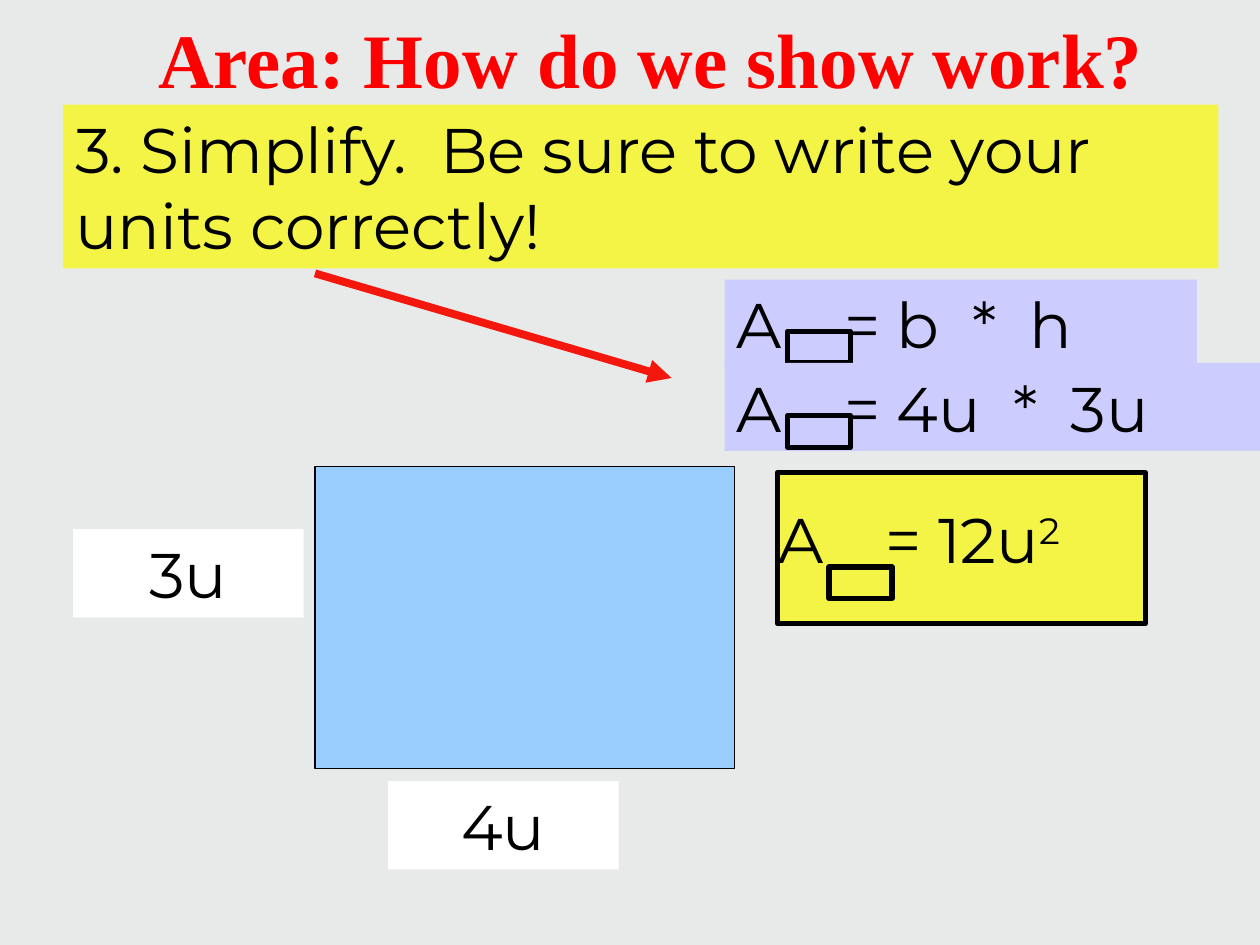
"""Build a slide that shows the last step of finding a rectangle's area."""
from lxml import etree
from pptx import Presentation
from pptx.dml.color import RGBColor
from pptx.enum.shapes import MSO_CONNECTOR, MSO_SHAPE
from pptx.enum.text import MSO_ANCHOR, PP_ALIGN
from pptx.oxml.ns import qn
from pptx.util import Inches, Pt

RECT = MSO_SHAPE.RECTANGLE
STRAIGHT = MSO_CONNECTOR.STRAIGHT
TOP, MIDDLE = MSO_ANCHOR.TOP, MSO_ANCHOR.MIDDLE
LEFT, CENTER = PP_ALIGN.LEFT, PP_ALIGN.CENTER
COLORS = {name: RGBColor.from_string(value) for name, value in {
    "background": "E8EAE9", "yellow": "F4F446", "blue": "99CCFF",
    "lavender": "CCCCFF", "white": "FFFFFF", "black": "000000",
    "title": "FF0000", "arrow": "F4170E",
}.items()}

prs = Presentation()
prs.slide_width, prs.slide_height = Inches(10), Inches(7.5)
s = prs.slides.add_slide(prs.slide_layouts[5])
s.background.fill.solid()
s.background.fill.fore_color.rgb = COLORS["background"]


def add_box(text, x, y, w, h, fill=None, line=None, align=LEFT, tab=None, power=None):
    sp = s.shapes.add_shape(RECT, Inches(x), Inches(y), Inches(w), Inches(h))
    sp.shadow.inherit = False
    if fill:
        sp.fill.solid()
        sp.fill.fore_color.rgb = COLORS[fill]
    else:
        sp.fill.background()
    if line:
        sp.line.color.rgb = COLORS["black"]
        sp.line.width = Pt(line)
    else:
        sp.line.fill.background()
    if not text:
        return
    tf = sp.text_frame
    tf.word_wrap = True
    tf.vertical_anchor = TOP
    p = tf.paragraphs[0]
    p.alignment = align
    if tab:
        tabs = etree.SubElement(p._p.get_or_add_pPr(), qn("a:tabLst"))
        etree.SubElement(tabs, qn("a:tab"), pos=str(Inches(tab)), algn="l")
    for part in filter(None, (text, power)):
        r = p.add_run()
        r.text = part
        r.font.name = "Montserrat"
        r.font.size = Pt(36)
        r.font.color.rgb = COLORS["black"]
    if power:
        r._r.get_or_add_rPr().set("baseline", "30000")


title = s.shapes.title
title.left, title.top = Inches(0.33), Inches(-0.17)
title.width, title.height = Inches(9.67), Inches(1.25)
tf = title.text_frame
tf.vertical_anchor = MIDDLE
p = tf.paragraphs[0]
p.alignment = CENTER
r = p.add_run()
r.text = "Area: How do we show work?"
r.font.name = "Times New Roman"
r.font.size = Pt(44)
r.font.bold = True
r.font.color.rgb = COLORS["title"]

add_box("", 6.17, 3.75, 2.92, 1.2, fill="yellow", line=3)
add_box("", 2.5, 3.7, 3.33, 2.4, fill="blue", line=0.75)
for label, x, y in [("3u", 0.58, 4.2), ("4u", 3.08, 6.2)]:
    add_box(label, x, y, 1.83, 0.7, fill="white", align=CENTER)
add_box("3. Simplify.  Be sure to write your units correctly!",
        0.5, 0.83, 9.17, 1.3, fill="yellow")

steps = [
    ("A\t= b  *  h", None, 5.75, 2.22, 3.75, "lavender", 6.25, 2.63, "lavender"),
    ("A\t= 4u  *  3u", None, 5.75, 2.88, 4.25, "lavender", 6.25, 3.3, "lavender"),
    ("A\t= 12u", "2", 6.08, 3.92, 3.92, None, 6.58, 4.5, "yellow"),
]
for text, power, x, y, w, fill, mark_x, mark_y, mark_fill in steps:
    add_box(text, x, y, w, 0.7, fill=fill, tab=0.85, power=power)
    add_box("", mark_x, mark_y, 0.5, 0.25, fill=mark_fill, line=3)

arrow = s.shapes.add_connector(STRAIGHT, Inches(2.5), Inches(2.17), Inches(5.33), Inches(3))
arrow.line.color.rgb = COLORS["arrow"]
arrow.line.width = Pt(4.5)
etree.SubElement(arrow.line._get_or_add_ln(), qn("a:tailEnd"), type="triangle")
etree.SubElement(arrow._element.spPr, qn("a:effectLst"))

prs.save("out.pptx")
